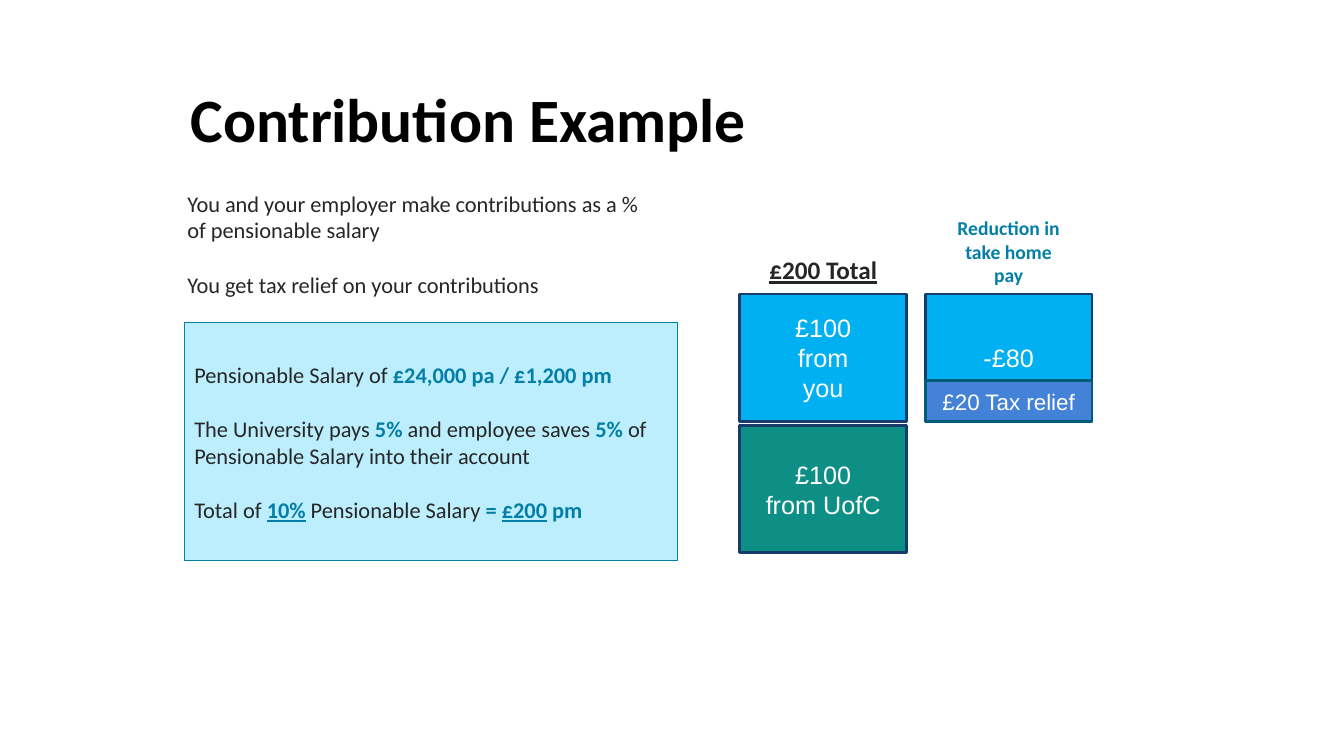
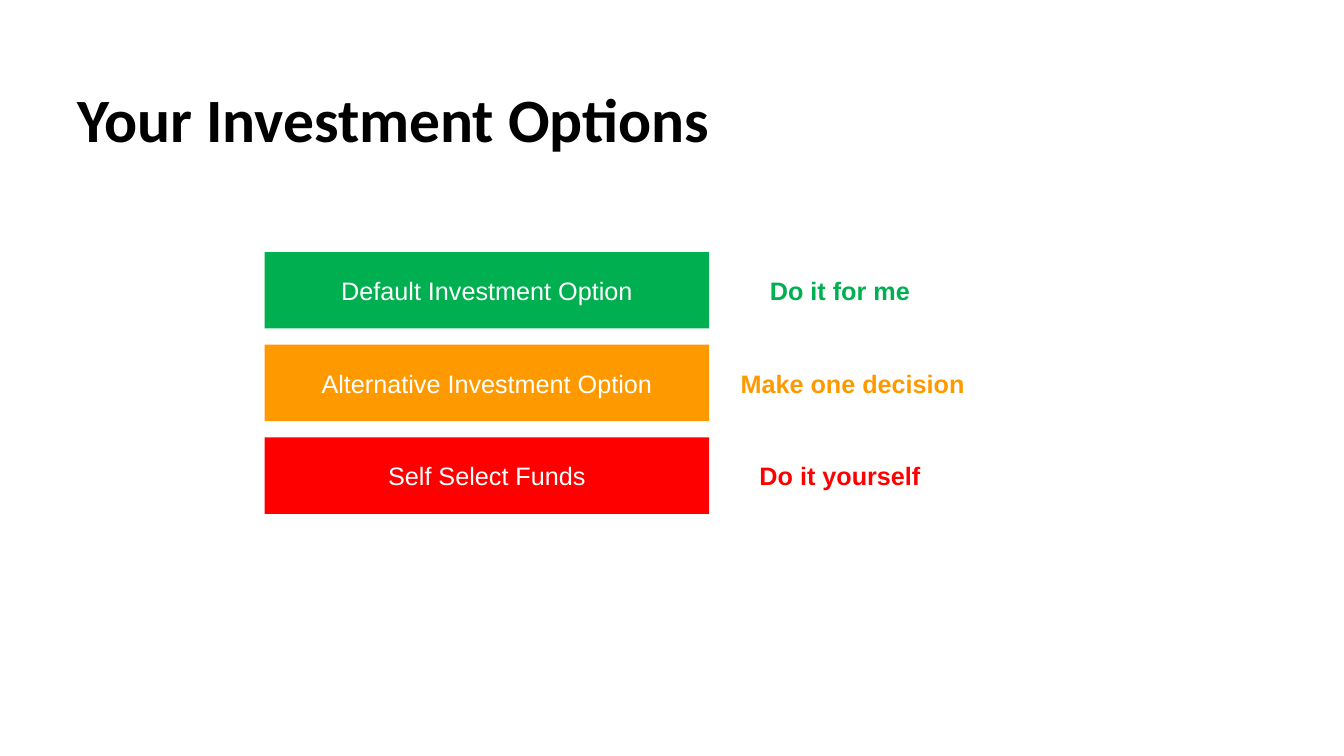
from pptx import Presentation
from pptx.dml.color import RGBColor
from pptx.enum.shapes import MSO_SHAPE
from pptx.enum.text import MSO_ANCHOR, PP_ALIGN
from pptx.util import Pt

COLORS = {
    "black": "000000", "white": "FFFFFF", "text": "262626", "teal": "037EA6",
    "pale_blue": "BCEEFE", "sky": "00B0F0", "navy": "173B6B",
    "blue": "4382D7", "dark_teal": "025D7B", "sea_green": "0E8F85",
    "green": "00B050", "orange": "FF9900", "red": "FF0000",
}
HEADING_FONT = "Calibri"
BLOCK_FONT = "Arial"
STRONG = {"color": "teal", "bold": True}
STRONG_UNDERLINED = {**STRONG, "underline": True}


def color(name):
    return RGBColor.from_string(COLORS[name])


def write_text(shape, paragraphs, *, size, font=HEADING_FONT, color_name="text",
               bold=False, underline=False, align=PP_ALIGN.LEFT,
               anchor=MSO_ANCHOR.MIDDLE, gap=0, line_spacing=None):
    """Fill a shape; a paragraph is a string or a list of (text, run format) pairs."""
    frame = shape.text_frame
    frame.word_wrap = True
    frame.vertical_anchor = anchor
    for index, content in enumerate(paragraphs):
        paragraph = frame.add_paragraph() if index else frame.paragraphs[0]
        paragraph.alignment = align
        if index and gap:
            paragraph.space_before = Pt(gap)
        if line_spacing:
            paragraph.line_spacing = line_spacing
        runs = [(content, {})] if isinstance(content, str) else content
        for text, style in runs:
            run = paragraph.add_run()
            run.text = text
            run.font.name = font
            run.font.size = Pt(size)
            run.font.bold = style.get("bold", bold)
            run.font.underline = style.get("underline", underline)
            run.font.color.rgb = color(style.get("color", color_name))


def add_text(slide, box, paragraphs, **text_format):
    shape = slide.shapes.add_textbox(*map(Pt, box))
    write_text(shape, paragraphs, **text_format)


def add_box(slide, box, fill, line=None, line_width=2):
    shape = slide.shapes.add_shape(MSO_SHAPE.RECTANGLE, *map(Pt, box))
    shape.shadow.inherit = False
    shape.fill.solid()
    shape.fill.fore_color.rgb = color(fill)
    if line:
        shape.line.color.rgb = color(line)
        shape.line.width = Pt(line_width)
    else:
        shape.line.fill.background()
    return shape


def add_block(slide, box, paragraphs, fill, line=None, size=18):
    shape = add_box(slide, box, fill, line)
    write_text(shape, paragraphs, size=size, font=BLOCK_FONT, color_name="white",
               align=PP_ALIGN.CENTER)


def add_titled_slide(presentation, title, left):
    slide = presentation.slides.add_slide(presentation.slide_layouts[6])
    add_text(slide, (left, 60, 912 - 2 * left + 48, 37.5), [title], size=44,
             color_name="black", bold=True, anchor=MSO_ANCHOR.TOP, line_spacing=0.9)
    return slide


def add_explanation(slide, left, top):
    body = {"size": 16, "gap": 19.5}
    add_text(slide, (left, top, 340, 92), [
        "You and your employer make contributions as a % of pensionable salary",
        "You get tax relief on your contributions",
    ], anchor=MSO_ANCHOR.TOP, **body)
    panel = add_box(slide, (left + 5, top + 98.5, 352, 170), "pale_blue", "teal", 0.75)
    write_text(panel, [
        [("Pensionable Salary of ", {}), ("£24,000 pa / £1,200 pm", STRONG)],
        [("The University pays ", {}), ("5% ", STRONG), ("and employee saves ", {}),
         ("5% ", STRONG), ("of Pensionable Salary into their account", {})],
        [("Total of ", {}), ("10%", STRONG_UNDERLINED), (" Pensionable Salary ", {}),
         ("= ", STRONG), ("£200", STRONG_UNDERLINED), (" pm", STRONG)],
    ], **body)


def add_contribution_blocks(slide, left, top):
    """Stack both contributions, with the employee's net cost beside them."""
    width, height, row_gap, column_gap, relief_height = 119, 91, 3, 13.5, 29
    net_left = left + width + column_gap
    heading = {"bold": True, "align": PP_ALIGN.CENTER}
    add_text(slide, (left - 5, top - 34.5, width + 10, 34), ["£200 Total"],
             size=18, underline=True, **heading)
    add_text(slide, (net_left + 15, top - 50.5, width - 30, 40),
             ["Reduction in take home pay"], size=14, color_name="teal", **heading)
    contributions = [(["£100", "from", "you"], "sky"),
                     (["£100", "from UofC"], "sea_green")]
    for row, (lines, fill) in enumerate(contributions):
        row_top = top + row * (height + row_gap)
        add_block(slide, (left, row_top, width, height), lines, fill, "navy")
    add_block(slide, (net_left, top, width, height), ["-£80"], "sky", "navy")
    add_block(slide, (net_left, top + height - relief_height, width, relief_height),
              ["£20 Tax relief"], "blue", "dark_teal", size=16)


def add_option_rows(slide, left, top):
    width, height, pitch, label_gap = 317.5, 54.5, 66.25, 12
    options = [
        ("Default Investment Option", "Do it for me", "green", 163),
        ("Alternative Investment Option", "Make one decision", "orange", 181),
        ("Self Select Funds", "Do it yourself", "red", 163),
    ]
    for row, (option, label, accent, label_width) in enumerate(options):
        row_top = top + row * pitch
        add_block(slide, (left, row_top, width, height), [option], accent)
        add_text(slide, (left + width + label_gap, row_top, label_width, height), [label],
                 size=18, font=BLOCK_FONT, color_name=accent, bold=True,
                 align=PP_ALIGN.CENTER)


def main():
    presentation = Presentation()
    presentation.slide_width = Pt(960)
    presentation.slide_height = Pt(540)

    example = add_titled_slide(presentation, "Contribution Example", 129)
    add_explanation(example, 126.75, 132)
    add_contribution_blocks(example, 528.5, 210)

    options = add_titled_slide(presentation, "Your Investment Options", 48)
    add_option_rows(options, 189, 180)

    presentation.save("out.pptx")


if __name__ == "__main__":
    main()
